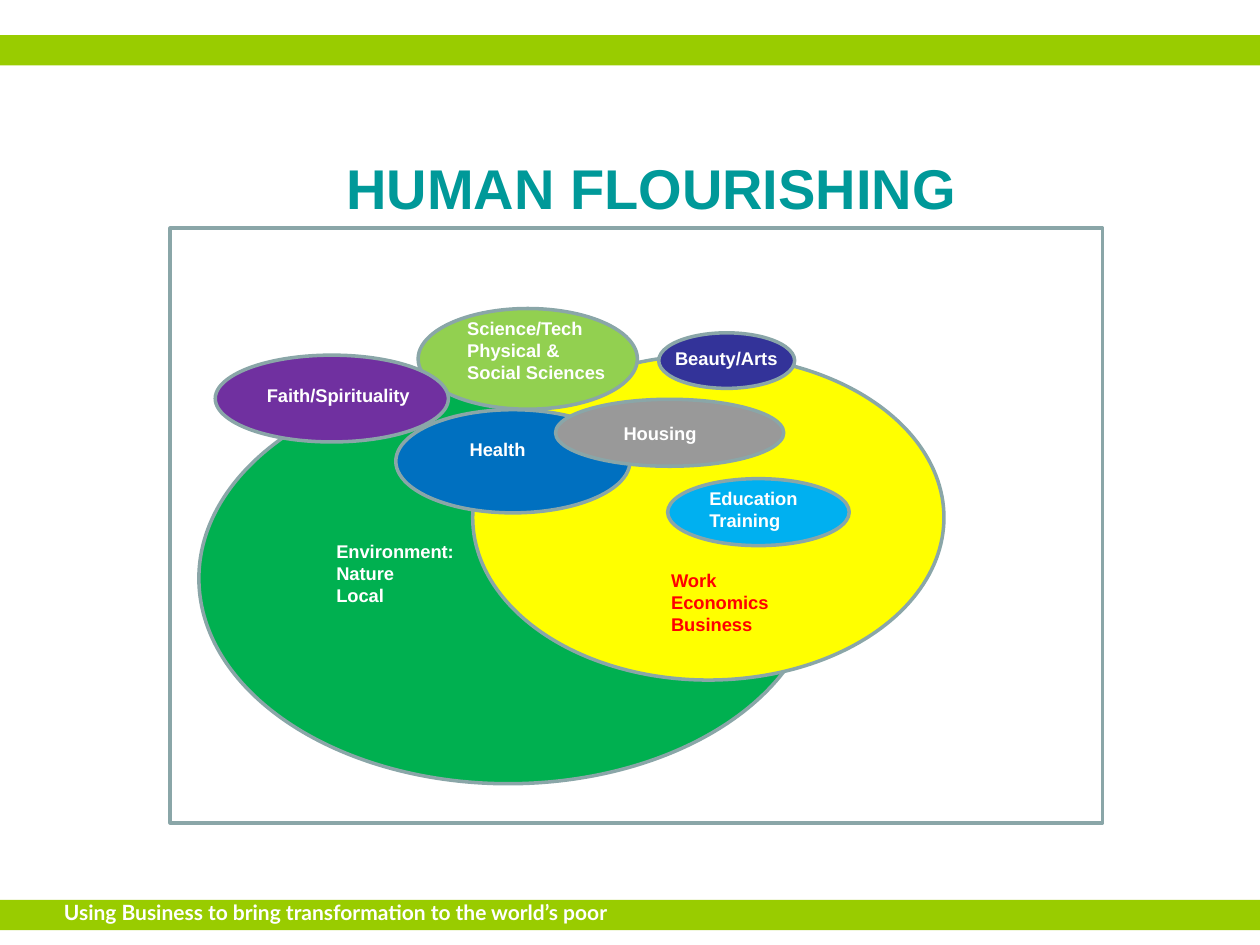
"""Build the Human Flourishing slide of overlapping life domains."""
import pptx
import pptx.dml.color
import pptx.enum.shapes
import pptx.enum.text
import pptx.util

Cm = pptx.util.Cm
Pt = pptx.util.Pt
RGBColor = pptx.dml.color.RGBColor
MSO_SHAPE = pptx.enum.shapes.MSO_SHAPE

WHITE = RGBColor(0xFF, 0xFF, 0xFF)
LIME = RGBColor(0x99, 0xCC, 0x00)
OUTLINE = RGBColor(0x8A, 0xA6, 0xA8)
TEAL = RGBColor(0x00, 0x99, 0x99)
RED = RGBColor(0xFF, 0x00, 0x00)
GREEN = RGBColor(0x00, 0xB0, 0x50)
YELLOW = RGBColor(0xFF, 0xFF, 0x00)
BLUE = RGBColor(0x00, 0x70, 0xC0)
SKY = RGBColor(0x00, 0xB0, 0xF0)
GREY = RGBColor(0x99, 0x99, 0x99)
LEAF = RGBColor(0x92, 0xD0, 0x50)
INDIGO = RGBColor(0x33, 0x33, 0x99)
PURPLE = RGBColor(0x70, 0x30, 0xA0)

deck = pptx.Presentation()
deck.slide_width = Cm(25.4)
deck.slide_height = Cm(19.05)
slide = deck.slides.add_slide(deck.slide_layouts[6])


def add_figure(preset, bounds, fill=None, outline=None):
    figure = slide.shapes.add_shape(preset, *map(Cm, bounds))
    figure.shadow.inherit = False
    if fill is None:
        figure.fill.background()
    else:
        figure.fill.solid()
        figure.fill.fore_color.rgb = fill
    if outline is None:
        figure.line.fill.background()
    else:
        figure.line.color.rgb = outline
        figure.line.width = Pt(2)


def add_text(bounds, lines, color, size=10.5, font="Arial"):
    frame = slide.shapes.add_textbox(*map(Cm, bounds)).text_frame
    frame.word_wrap = True
    frame.auto_size = pptx.enum.text.MSO_AUTO_SIZE.SHAPE_TO_FIT_TEXT
    for index, line in enumerate(lines):
        paragraph = frame.add_paragraph() if index else frame.paragraphs[0]
        run = paragraph.add_run()
        run.text = line
        run.font.name = font
        run.font.size = Pt(size)
        run.font.bold = True
        run.font.color.rgb = color
    return frame


for bar_top in (18.14, 0.71):
    add_figure(MSO_SHAPE.RECTANGLE, (0, bar_top, 25.4, 0.61), LIME)

motto = add_text((1.09, 18.03, 11.94, 0.71),
                 ["Using Business to bring transformation to the world’s poor"],
                 WHITE, 12, "Lato")
motto.word_wrap = False
motto.margin_left = motto.margin_right = Cm(0.2)
motto.margin_top = motto.margin_bottom = Cm(0.1)

add_figure(MSO_SHAPE.RECTANGLE, (3.43, 4.6, 18.8, 11.99), outline=OUTLINE)
add_text((6.73, 2.97, 13.59, 1.63), ["HUMAN FLOURISHING"], TEAL, 32)

domains = [
    ((4.01, 7.52, 12.47, 8.28), GREEN, (6.53, 10.77, 4.45, 1.6),
     ["Environment:", "Nature", "Local"], WHITE),
    ((9.53, 7.16, 9.5, 6.55), YELLOW, (13.28, 11.35, 3.25, 1.6),
     ["Work", "Economics", "Business"], RED),
    ((7.98, 8.26, 4.72, 2.08), BLUE, (9.22, 8.71, 2.49, 0.71),
     ["Health"], WHITE),
    ((13.46, 9.65, 3.66, 1.35), SKY, (14.05, 9.7, 2.77, 1.14),
     ["Education", "Training"], WHITE),
    ((11.2, 8.05, 4.6, 1.35), GREY, (12.32, 8.38, 3.02, 0.71),
     ["Housing"], WHITE),
    ((8.43, 6.22, 4.42, 2.03), LEAF, (9.17, 6.27, 3.38, 1.6),
     ["Science/Tech", "Physical &", "Social Sciences"], WHITE),
    ((13.28, 6.71, 2.74, 1.12), INDIGO, (13.36, 6.88, 2.74, 0.71),
     ["Beauty/Arts"], WHITE),
    ((4.34, 7.16, 4.7, 1.75), PURPLE, (5.13, 7.62, 3.56, 0.71),
     ["Faith/Spirituality"], WHITE),
]
for oval, fill, label, lines, color in domains:
    add_figure(MSO_SHAPE.OVAL, oval, fill, OUTLINE)
    add_text(label, lines, color)

deck.save("out.pptx")
